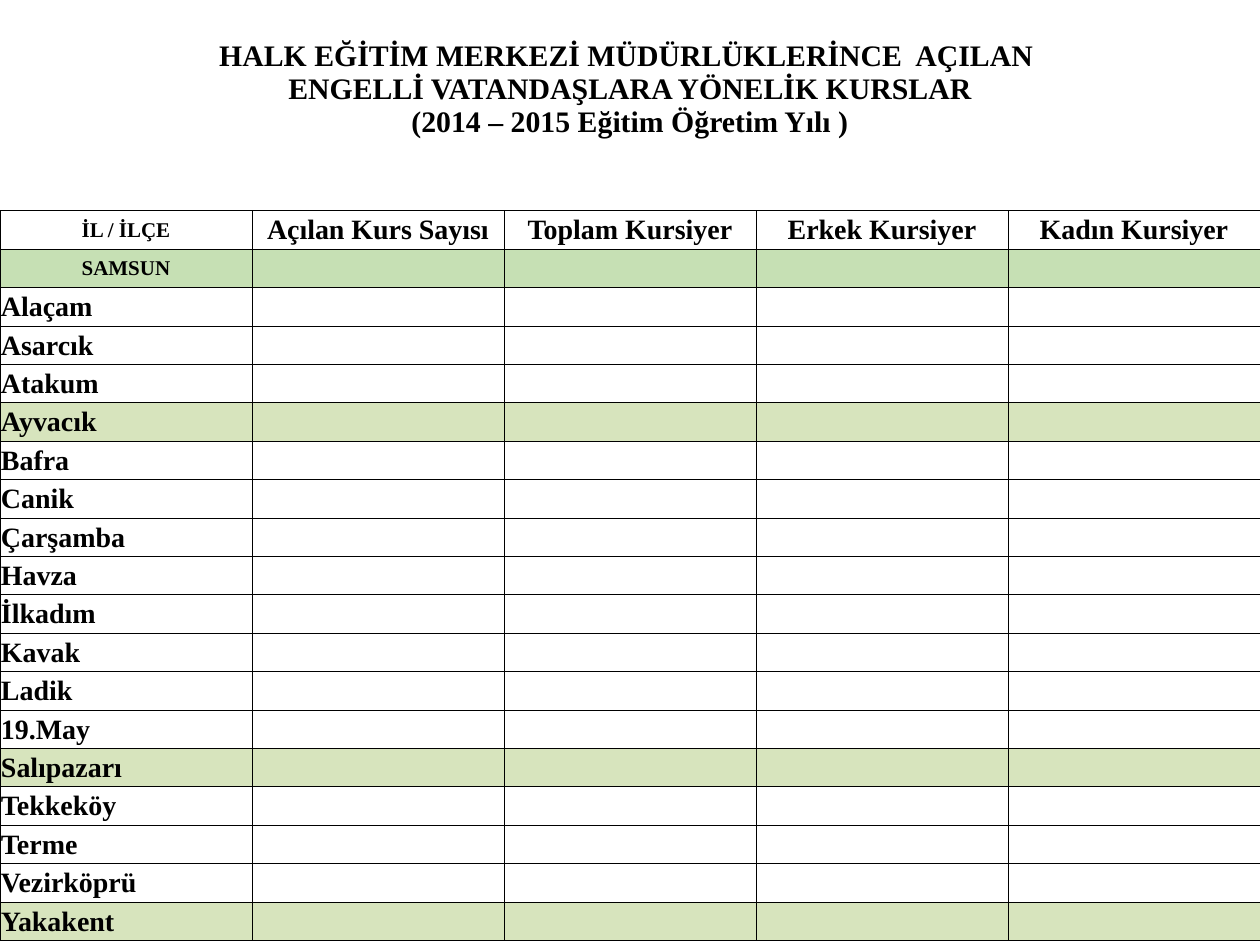
"""Build a slide with a table of courses for each district."""
import dataclasses
import typing

import lxml.etree
import pptx
import pptx.dml.color
import pptx.enum.text
import pptx.oxml.ns
import pptx.util

Cm = pptx.util.Cm
Pt = pptx.util.Pt
ALIGN = pptx.enum.text.PP_ALIGN
COLORS = {"ink": "000000", "plain": "FFFFFF", "city": "C6E0B4", "mark": "D7E4BD"}
FONT = "Times New Roman"
WIDTH, HEIGHT = 25.4, 19.05
COLS = 5
TITLE = [
    "HALK EĞİTİM MERKEZİ MÜDÜRLÜKLERİNCE  AÇILAN ",
    "ENGELLİ VATANDAŞLARA YÖNELİK KURSLAR",
    "(2014 – 2015 Eğitim Öğretim Yılı )",
]
HEADS = ["İL / İLÇE", "Açılan Kurs Sayısı", "Toplam Kursiyer",
         "Erkek Kursiyer", "Kadın Kursiyer"]
TOWNS = ["Alaçam", "Asarcık", "Atakum", "Ayvacık", "Bafra", "Canik",
         "Çarşamba", "Havza", "İlkadım", "Kavak", "Ladik", "19.May",
         "Salıpazarı", "Tekkeköy", "Terme", "Vezirköprü", "Yakakent"]
MARKED = {"Ayvacık", "Salıpazarı", "Yakakent"}
TOP, GAP, BODY = 3.58, 0.67, 14.72


@dataclasses.dataclass
class Row:
    """One row of the table."""
    texts: list[str]
    height: float
    fill: typing.Optional[str] = None
    edges: str = "LRTB"
    first: float = 16
    align: typing.Any = ALIGN.CENTER


def write(cell: typing.Any, text: str, *, size: float, align: typing.Any) -> None:
    """Write bold text into a cell, one paragraph a line."""
    frame = cell.text_frame
    for index, line in enumerate(text.split("\n")):
        para = frame.add_paragraph() if index else frame.paragraphs[0]
        para.alignment = align
        if not line:
            para._p.get_or_add_endParaRPr().set("sz", "1000")
            continue
        run = para.add_run()
        run.text = line
        run.font.name = FONT
        run.font.size = Pt(size)
        run.font.bold = True
        run.font.color.rgb = pptx.dml.color.RGBColor.from_string(COLORS["ink"])


def border(cell: typing.Any, edges: str) -> None:
    """Draw the named edges of a cell and clear the others."""
    name = pptx.oxml.ns.qn
    props = cell._tc.get_or_add_tcPr()
    for side in "LRTB":
        line = lxml.etree.SubElement(props, name(f"a:ln{side}"), w=str(Pt(0.5)))
        if side in edges:
            fill = lxml.etree.SubElement(line, name("a:solidFill"))
            lxml.etree.SubElement(fill, name("a:srgbClr"), val=COLORS["ink"])
        else:
            lxml.etree.SubElement(line, name("a:noFill"))


def draw(table: typing.Any, index: int, row: Row) -> None:
    """Fill and format one row of the table."""
    table.rows[index].height = Cm(row.height)
    for col, text in enumerate(row.texts):
        cell = table.cell(index, col)
        cell.margin_left = cell.margin_right = cell.margin_top = Cm(0.02)
        cell.margin_bottom = 0
        cell.vertical_anchor = pptx.enum.text.MSO_ANCHOR.MIDDLE
        border(cell, row.edges)
        if row.fill:
            cell.fill.solid()
            color = pptx.dml.color.RGBColor.from_string(COLORS[row.fill])
            cell.fill.fore_color.rgb = color
        else:
            cell.fill.background()
        write(cell, text, size=16 if col else row.first, align=row.align)


def main() -> None:
    """Build and save the slide."""
    deck = pptx.Presentation()
    deck.slide_width, deck.slide_height = Cm(WIDTH), Cm(HEIGHT)
    slide = deck.slides.add_slide(deck.slide_layouts[6])
    blank = [""] * (COLS - 1)
    step = BODY / (len(TOWNS) + 2)
    rows = [
        Row(["\n".join(TITLE), *blank], TOP, edges="", first=17),
        Row(["", *blank], GAP, edges="B"),
        Row(HEADS, step, first=12),
        Row(["SAMSUN", *blank], step, "city", first=12),
    ]
    for town in TOWNS:
        fill = "mark" if town in MARKED else "plain"
        rows.append(Row([town, *blank], step, fill, align=ALIGN.LEFT))
    frame = slide.shapes.add_table(
        len(rows), COLS, 0, 0, Cm(WIDTH), Cm(TOP + GAP + BODY))
    table = frame.table
    table.first_row = table.horz_banding = False
    for index, row in enumerate(rows):
        draw(table, index, row)
    table.cell(0, 0).merge(table.cell(0, COLS - 1))
    deck.save("out.pptx")


if __name__ == "__main__":
    main()
